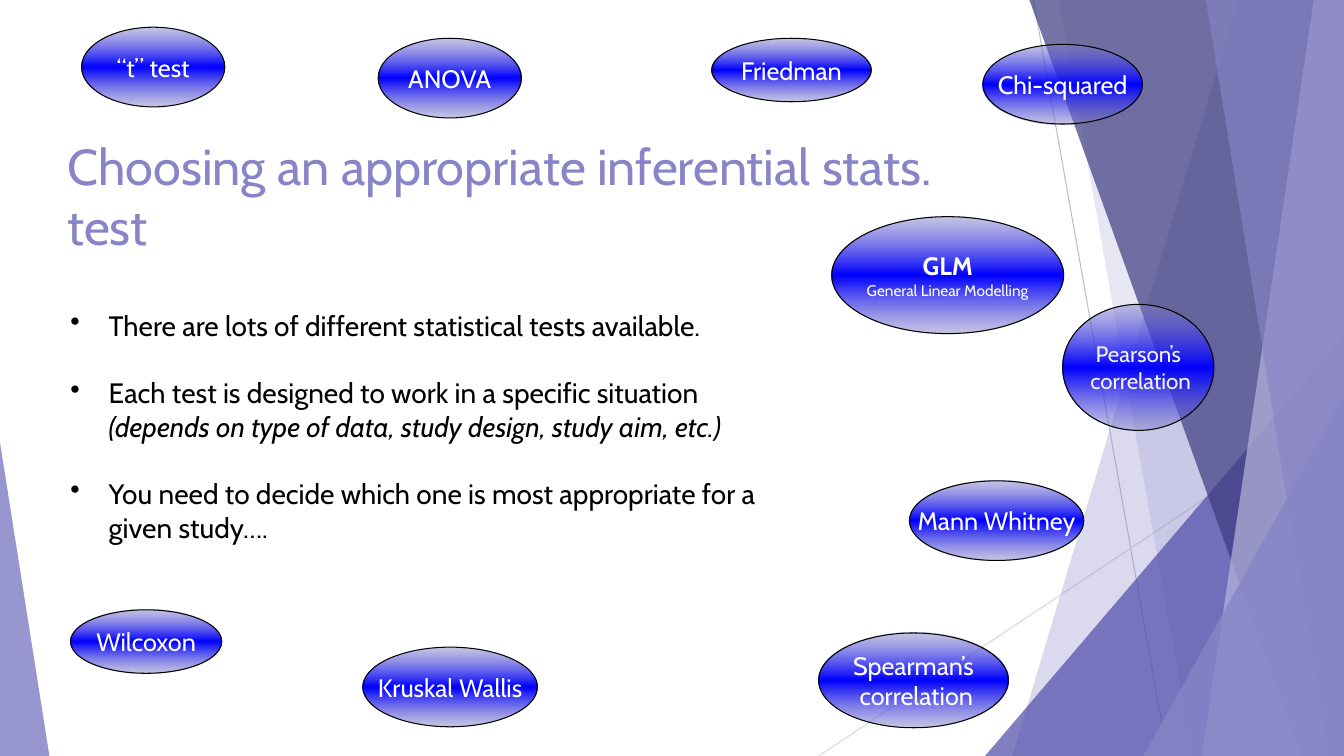
from typing import NamedTuple

from lxml import etree
from pptx import Presentation
from pptx.dml.color import RGBColor
from pptx.enum.shapes import MSO_CONNECTOR, MSO_SHAPE
from pptx.enum.text import MSO_ANCHOR, PP_ALIGN
from pptx.oxml.ns import qn
from pptx.util import Inches, Pt

STRAIGHT = MSO_CONNECTOR.STRAIGHT
ELLIPSE = MSO_SHAPE.OVAL
TRIANGLE = MSO_SHAPE.ISOSCELES_TRIANGLE
CENTER = PP_ALIGN.CENTER
MIDDLE = MSO_ANCHOR.MIDDLE

WIDTH, HEIGHT = 13.33, 7.5
FONT = "Cabin"
COLORS = {
    "lilac": "8784C7", "pale": "B7B5DD", "violet": "514DAA", "deep": "3D3A7F",
    "blue": "0000FF", "black": "000000", "white": "FFFFFF", "soft": "F2F2F2",
    "gray": "BFBFBF", "light gray": "D9D9D9",
}


class Ray(NamedTuple):
    start: tuple[float, float]
    end: tuple[float, float]
    color: str


class Band(NamedTuple):
    """Full-height strip from a slanted left edge to the right of the slide."""
    top_x: float
    bottom_x: float
    color: str
    opacity: int


class Wedge(NamedTuple):
    """Right triangle on the bottom edge, its apex at the left (0) or right (1)."""
    left: float
    top: float
    width: float
    apex: int
    color: str
    opacity: int


class Line(NamedTuple):
    text: str
    size: int = 18
    color: str = "white"
    bold: bool = False


class Bubble(NamedTuple):
    left: float
    top: float
    width: float
    height: float
    lines: list[Line]


RAYS = [
    Ray((10.25, 0), (11.58, HEIGHT), "gray"),
    Ray((WIDTH, 4.03), (8.12, HEIGHT), "light gray"),
]
BACKDROP = [
    Band(12.28, 10.04, "lilac", 30),
    Band(10.5, 11.83, "lilac", 20),
    Wedge(9.77, 3.33, 3.56, 1, "violet", 72),
    Band(10.21, 12.91, "deep", 70),
    Band(13.03, 11.92, "pale", 70),
    Band(11.96, 13.18, "lilac", 65),
    Wedge(11.34, 3.93, 1.99, 1, "lilac", 80),
    Wedge(0, 4.39, 0.49, 0, "lilac", 85),
]
BULLETS = [
    [("There are lots of different statistical tests available.", False)],
    [("Each test is designed to work in a specific situation ", False),
     ("(depends on type of data, study design, study aim, etc.)", True)],
    [("You need to decide which one is most appropriate for a given study….", False)],
]
BUBBLES = [
    Bubble(9.02, 4.77, 1.73, 0.79, [Line("Mann Whitney")]),
    Bubble(0.81, 0.27, 1.42, 0.79, [Line("“t” test")]),
    Bubble(10.54, 3.02, 1.5, 1.25,
           [Line("Pearson’s", 16, "soft"), Line(" correlation", 16, "soft")]),
    Bubble(3.75, 0.38, 1.42, 0.79, [Line("ANOVA")]),
    Bubble(9.75, 0.44, 1.58, 0.79, [Line("Chi-squared")]),
    Bubble(3.6, 6.42, 1.73, 0.79, [Line("Kruskal Wallis")]),
    Bubble(0.7, 6.05, 1.5, 0.63, [Line("Wilcoxon")]),
    Bubble(7.06, 0.38, 1.58, 0.63, [Line("Friedman")]),
    Bubble(8.12, 6.28, 1.88, 0.94, [Line("Spearman’s"), Line(" correlation")]),
    Bubble(8.25, 2.15, 2.3, 1.16,
           [Line("GLM", bold=True), Line("General Linear Modelling", 11)]),
]


def rgb(color: str) -> RGBColor:
    return RGBColor.from_string(COLORS[color])


def add_alpha(color_element, opacity: int) -> None:
    etree.SubElement(color_element, qn("a:alpha"), val=str(opacity * 1000))


def add_span(para, text: str, *, size: int, color: str,
             bold: bool = False, italic: bool = False) -> None:
    span = para.add_run()
    span.text = text
    span.font.name = FONT
    span.font.size = Pt(size)
    span.font.bold = bold
    span.font.italic = italic
    span.font.color.rgb = rgb(color)


def next_para(frame, index: int):
    return frame.add_paragraph() if index else frame.paragraphs[0]


def add_text_box(page, left: float, top: float, width: float, height: float):
    box = page.shapes.add_textbox(Inches(left), Inches(top), Inches(width), Inches(height))
    box.text_frame.word_wrap = True
    return box.text_frame


def draw_ray(page, ray: Ray) -> None:
    points = [Inches(value) for value in ray.start + ray.end]
    connector = page.shapes.add_connector(STRAIGHT, *points)
    connector.line.color.rgb = rgb(ray.color)
    connector.line.width = Pt(0.75)
    etree.SubElement(connector._element.spPr, qn("a:effectLst"))


def draw_backdrop(page, part: Band | Wedge) -> None:
    if isinstance(part, Band):
        corners = [(part.top_x, 0), (WIDTH, 0), (WIDTH, HEIGHT), (part.bottom_x, HEIGHT)]
        points = [(Inches(x), Inches(y)) for x, y in corners]
        builder = page.shapes.build_freeform(*points[0])
        builder.add_line_segments(points[1:], close=True)
        shape = builder.convert_to_shape()
    else:
        shape = page.shapes.add_shape(TRIANGLE, Inches(part.left), Inches(part.top),
                                      Inches(part.width), Inches(HEIGHT - part.top))
        shape.adjustments[0] = part.apex
    shape.shadow.inherit = False
    shape.line.fill.background()
    shape.fill.solid()
    shape.fill.fore_color.rgb = rgb(part.color)
    add_alpha(shape._element.spPr.find(".//" + qn("a:srgbClr")), part.opacity)


def fill_bubble(shape) -> None:
    shape.fill.gradient()
    shape.fill.gradient_angle = 90
    stops = shape._element.spPr.find(".//" + qn("a:gsLst"))
    stops.clear()
    for position, color, opacity in [(0, "lilac", 46), (50, "blue", 100), (100, "lilac", 46)]:
        stop = etree.SubElement(stops, qn("a:gs"), pos=str(position * 1000))
        add_alpha(etree.SubElement(stop, qn("a:srgbClr"), val=COLORS[color]), opacity)


def draw_bubble(page, bubble: Bubble) -> None:
    shape = page.shapes.add_shape(ELLIPSE, Inches(bubble.left), Inches(bubble.top),
                                  Inches(bubble.width), Inches(bubble.height))
    shape.shadow.inherit = False
    fill_bubble(shape)
    shape.line.color.rgb = rgb("black")
    shape.line.width = Pt(0.75)
    frame = shape.text_frame
    frame.word_wrap = False
    frame.vertical_anchor = MIDDLE
    for index, line in enumerate(bubble.lines):
        para = next_para(frame, index)
        para.alignment = CENTER
        add_span(para, line.text, size=line.size, color=line.color, bold=line.bold)


def draw_bullets(page) -> None:
    frame = add_text_box(page, 0.6, 3.01, 7.42, 2.79)
    for index, spans in enumerate(BULLETS):
        para = next_para(frame, index)
        para.space_before = Pt(24 if index else 0)
        properties = para._p.get_or_add_pPr()
        properties.set("marL", str(Inches(0.38)))
        properties.set("indent", str(Inches(-0.38)))
        etree.SubElement(properties, qn("a:buChar"), char="•")
        for text, italic in spans:
            add_span(para, text, size=20, color="black", italic=italic)


def main() -> None:
    deck = Presentation()
    deck.slide_width, deck.slide_height = Inches(WIDTH), Inches(HEIGHT)
    page = deck.slides.add_slide(deck.slide_layouts[6])

    # Backdrop
    for ray in RAYS:
        draw_ray(page, ray)
    for part in BACKDROP:
        draw_backdrop(page, part)

    # Title and bullets
    title = add_text_box(page, 0.57, 1.29, 9.4, 1.44)
    add_span(title.paragraphs[0], "Choosing an appropriate inferential stats. test",
             size=36, color="lilac")
    draw_bullets(page)

    # Test names
    for bubble in BUBBLES:
        draw_bubble(page, bubble)

    deck.save("out.pptx")


if __name__ == "__main__":
    main()
